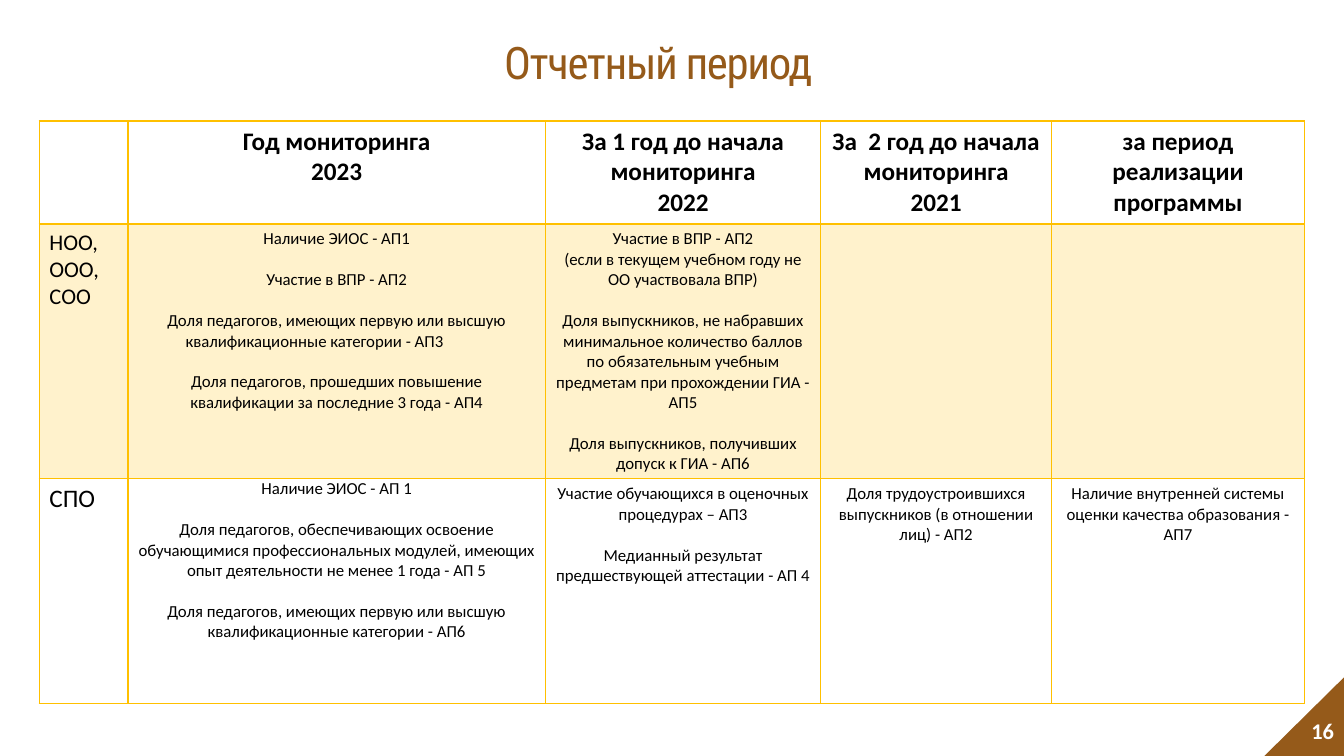
import lxml.etree
import pptx
import pptx.dml.color
import pptx.enum.shapes
import pptx.enum.text
import pptx.oxml.ns
import pptx.util

Inches = pptx.util.Inches
Pt = pptx.util.Pt
RGBColor = pptx.dml.color.RGBColor
ALIGN = pptx.enum.text.PP_ALIGN
ANCHOR = pptx.enum.text.MSO_ANCHOR
qn = pptx.oxml.ns.qn

BROWN = RGBColor(0x95, 0x5A, 0x1A)
GOLD = RGBColor(0xFF, 0xC0, 0x00)
BLACK = RGBColor(0x00, 0x00, 0x00)
WHITE = RGBColor(0xFF, 0xFF, 0xFF)

COLUMN_WIDTHS = [0.88, 4.14, 2.73, 2.29, 2.51]
ROW_HEIGHTS = [1.02, 2.53, 2.23]
BLOCK_GAP = 14.6

HEADINGS = [
    "",
    "Год мониторинга\n2023",
    "За 1 год до начала мониторинга\n2022",
    "За  2 год до начала мониторинга\n2021",
    "за период реализации программы",
]
SCHOOL_ROW = [
    "НОО, ООО, СОО",
    "Наличие ЭИОС - АП1\n\nУчастие в ВПР - АП2\n\n"
    "Доля педагогов, имеющих первую или высшую квалификационные категории - АП3\t\n\n"
    "Доля педагогов, прошедших повышение квалификации за последние 3 года - АП4",
    "Участие в ВПР - АП2\n(если в текущем учебном году не ОО участвовала ВПР)\n\n"
    "Доля выпускников, не набравших минимальное количество баллов по обязательным "
    "учебным предметам при прохождении ГИА - АП5\n\n"
    "Доля выпускников, получивших допуск к ГИА - АП6",
    "",
    "",
]
COLLEGE_ROW = [
    "СПО",
    "Наличие ЭИОС - АП 1\n\n"
    "Доля педагогов, обеспечивающих освоение обучающимися профессиональных модулей, "
    "имеющих опыт деятельности не менее 1 года - АП 5\n\n"
    "Доля педагогов, имеющих первую или высшую квалификационные категории - АП6",
    "Участие обучающихся в оценочных процедурах – АП3\n\n"
    "Медианный результат предшествующей аттестации - АП 4",
    "Доля трудоустроившихся выпускников (в отношении лиц) - АП2",
    "Наличие внутренней системы оценки качества образования - АП7",
]


def write_text(frame, text, *, size, color=BLACK, bold=False, font="Calibri",
               align=ALIGN.CENTER, line_spacing=None, tracking=None):
    """Write lines as paragraphs, with a gap before each block after an empty line."""
    paragraph = None
    for block in text.split("\n\n"):
        for index, line in enumerate(block.split("\n")):
            first = paragraph is None
            paragraph = frame.paragraphs[0] if first else frame.add_paragraph()
            paragraph.alignment = align
            if line_spacing:
                paragraph.line_spacing = line_spacing
            if index == 0 and not first:
                paragraph.space_before = Pt(BLOCK_GAP)
            if not line:
                paragraph.font.size = Pt(size)
                continue
            run = paragraph.add_run()
            run.text = line
            run.font.name = font
            run.font.size = Pt(size)
            run.font.bold = bold
            run.font.color.rgb = color
            if tracking:
                run.font._element.set("spc", str(tracking))


def add_text_box(slide, text, left, top, width, height, *, anchor, **text_format):
    """Add a wrapping text box."""
    box = slide.shapes.add_textbox(Inches(left), Inches(top), Inches(width), Inches(height))
    box.text_frame.word_wrap = True
    box.text_frame.vertical_anchor = anchor
    write_text(box.text_frame, text, **text_format)


def add_corner(slide):
    """Add the triangle behind the page number."""
    corner = slide.shapes.add_shape(
        pptx.enum.shapes.MSO_SHAPE.RIGHT_TRIANGLE,
        Inches(12.54), Inches(6.71), Inches(0.79), Inches(0.8))
    corner.rotation = 270
    corner.shadow.inherit = False
    corner.fill.solid()
    corner.fill.fore_color.rgb = BROWN
    corner.line.fill.background()


def set_borders(cell, widths):
    """Draw gold cell borders, with widths in points by side."""
    properties = cell._tc.get_or_add_tcPr()
    for position, side in enumerate(("L", "R", "T", "B")):
        line = lxml.etree.Element(qn(f"a:ln{side}"), w=str(Pt(widths.get(side, 1))))
        fill = lxml.etree.SubElement(line, qn("a:solidFill"))
        lxml.etree.SubElement(fill, qn("a:srgbClr"), val=str(GOLD))
        properties.insert(position, line)


def set_fill(cell, tinted):
    """Fill a cell with translucent gold or leave it clear."""
    if not tinted:
        cell.fill.background()
        return
    cell.fill.solid()
    cell.fill.fore_color.rgb = GOLD
    color = cell._tc.tcPr.find(f".//{qn('a:srgbClr')}")
    lxml.etree.SubElement(color, qn("a:alpha"), val="20000")


def add_period_table(slide):
    """Add the table of indicators by reporting period."""
    rows = [HEADINGS, SCHOOL_ROW, COLLEGE_ROW]
    table = slide.shapes.add_table(
        len(rows), len(COLUMN_WIDTHS), Inches(0.39), Inches(1.2),
        Inches(sum(COLUMN_WIDTHS)), Inches(sum(ROW_HEIGHTS))).table
    table.horz_banding = False
    for column, width in zip(table.columns, COLUMN_WIDTHS):
        column.width = Inches(width)
    for row, height in zip(table.rows, ROW_HEIGHTS):
        row.height = Inches(height)
    for row_index, texts in enumerate(rows):
        for column_index, text in enumerate(texts):
            cell = table.cell(row_index, column_index)
            label = column_index == 0
            size = (18, 16, 18)[row_index] if label or row_index == 0 else 12
            write_text(cell.text_frame, text, size=size, bold=row_index == 0,
                       align=ALIGN.LEFT if label else ALIGN.CENTER)
            set_fill(cell, row_index == 1)
            set_borders(cell, {0: {"B": 2}, 1: {"T": 2}}.get(row_index, {}))
    college_year = table.cell(2, 1)
    college_year.margin_left = college_year.margin_right = Inches(0.07)
    college_year.margin_top = college_year.margin_bottom = Inches(0)


def main():
    """Build the slide and save it."""
    presentation = pptx.Presentation()
    presentation.slide_width = Inches(13.33)
    presentation.slide_height = Inches(7.5)
    slide = presentation.slides.add_slide(presentation.slide_layouts[6])
    add_corner(slide)
    add_text_box(slide, "16", 10.33, 7.05, 3, 0.4, anchor=ANCHOR.MIDDLE,
                 size=16, color=WHITE, bold=True, align=ALIGN.RIGHT)
    add_text_box(slide, "Отчетный период", 4.38, 0.25, 4.3, 0.68, anchor=ANCHOR.BOTTOM,
                 size=32, color=BROWN, font="Roboto Condensed", line_spacing=0.9,
                 tracking=-100)
    add_period_table(slide)
    presentation.save("out.pptx")


if __name__ == "__main__":
    main()
